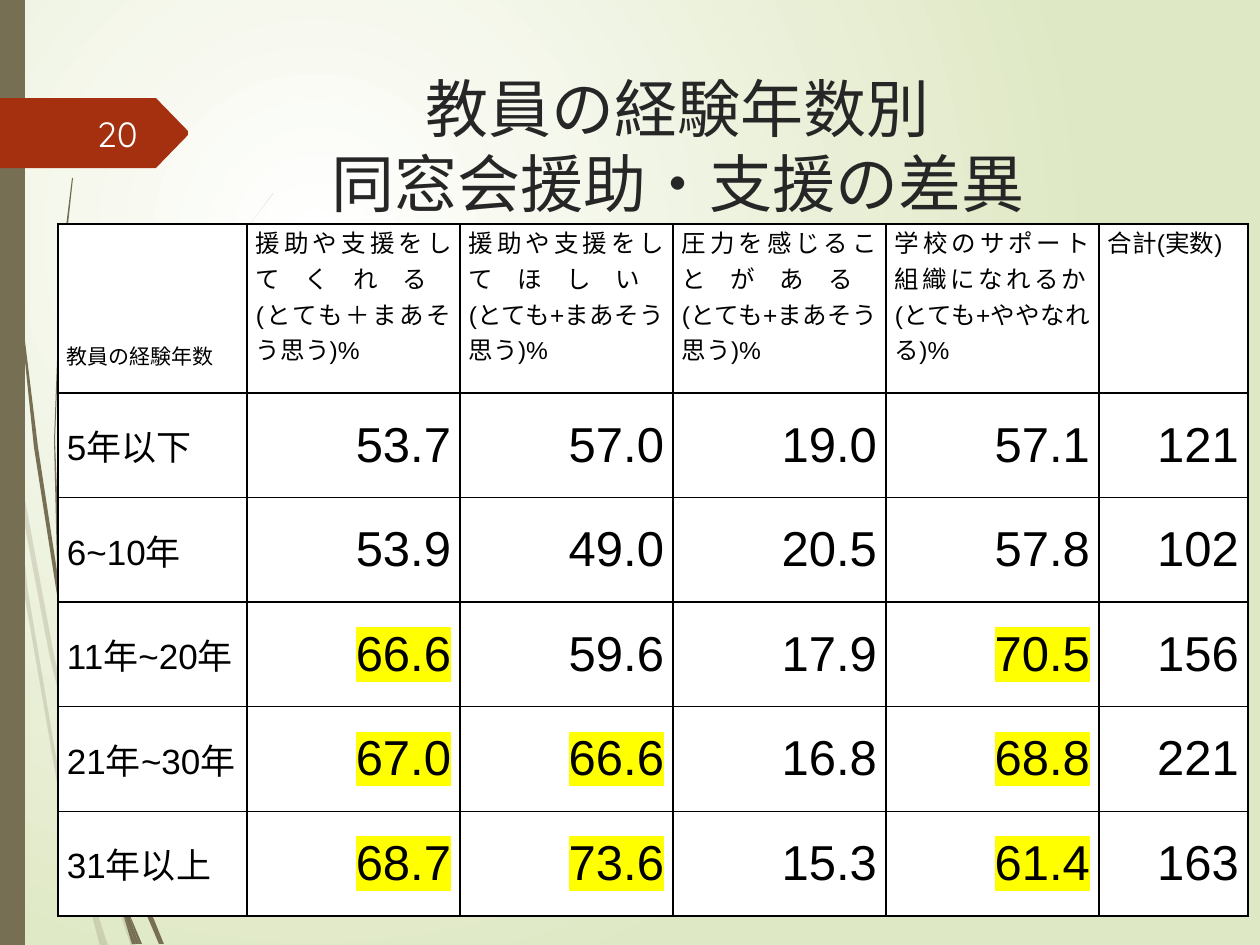
from lxml.etree import SubElement
from pptx import Presentation
from pptx.dml.color import RGBColor
from pptx.enum.shapes import MSO_SHAPE
from pptx.enum.text import MSO_ANCHOR, PP_ALIGN
from pptx.oxml import parse_xml
from pptx.oxml.ns import qn
from pptx.util import Emu, Pt

PX = 914400 / 126
OLIVE = RGBColor(0x76, 0x6F, 0x54)
RUST = RGBColor(0xA5, 0x30, 0x10)
WHITE = RGBColor(0xFF, 0xFF, 0xFF)
PALE = RGBColor(0xFE, 0xFF, 0xFF)
SAGE = RGBColor(0xDF, 0xE8, 0xC4)
CHARCOAL = RGBColor(0x26, 0x26, 0x26)
BLACK = RGBColor(0, 0, 0)
YELLOW = RGBColor(0xFF, 0xFF, 0)

TITLE = ["教員の経験年数別", "同窓会援助・支援の差異"]
PAGE_NUMBER = "20"
CORNER = "教員の経験年数"
HEADERS = [
    ["援助や支援をしてくれる", "(とても＋まあそう思う)%"],
    ["援助や支援をしてほしい", "(とても+まあそう思う)%"],
    ["圧力を感じることがある", "(とても+まあそう思う)%"],
    ["学校のサポート組織になれるか", "(とても+ややなれる)%"],
    ["合計(実数)"],
]
ROWS = [
    ("5年以下", ["53.7", "57.0", "19.0", "57.1", "121"], []),
    ("6~10年", ["53.9", "49.0", "20.5", "57.8", "102"], []),
    ("11年~20年", ["66.6", "59.6", "17.9", "70.5", "156"], [0, 3]),
    ("21年~30年", ["67.0", "66.6", "16.8", "68.8", "221"], [0, 1, 3]),
    ("31年以上", ["68.7", "73.6", "15.3", "61.4", "163"], [0, 1, 3]),
]
COLUMN_WIDTHS = [189, 213, 213, 213, 213, 149]
TABLE_LEFT, TABLE_TOP, TABLE_HEIGHT, HEADER_HEIGHT = 58, 224, 692, 169

FAINT_WISPS = [
    [(10, 441), (8, 406), (0, 355), (0, 377), (9, 433)],
    [(50, 658), (74, 755), (74, 738), (54, 655), (13, 435), (15, 474)],
    [(81, 765), (77, 751), (77, 769), (107, 874), (131, 946), (136, 946), (111, 872)],
    [(105, 946), (108, 946), (92, 896)],
    [(81, 861), (60, 780), (28, 591), (15, 474), (10, 441), (24, 592), (57, 782),
     (81, 873), (88, 900), (87, 891)],
    [(73, 755), (76, 814), (81, 861), (84, 872), (92, 896), (91, 890), (79, 814),
     (77, 769), (77, 766)],
    [(77, 736), (96, 582), (140, 440), (200, 309), (236, 249), (253, 220), (273, 194),
     (273, 193), (253, 220), (234, 248), (199, 307), (139, 438), (94, 581), (74, 736),
     (74, 738), (77, 751)],
    [(88, 900), (100, 946), (103, 946)],
    [(77, 766), (77, 769), (77, 751), (74, 738), (73, 755)],
    [(84, 872), (82, 861), (87, 891), (88, 900), (103, 946), (105, 946), (92, 896)],
]
SOLID_WISPS = [
    [(6, 139), (18, 294), (34, 447), (58, 601), (59, 606), (57, 576), (57, 571),
     (38, 447), (19, 292), (8, 137), (5, 60), (4, 0), (3, 0), (4, 60)],
    [(92, 746), (111, 813), (111, 798), (111, 795), (97, 743), (63, 595), (67, 636)],
    [(118, 818), (115, 808), (115, 827), (137, 892), (159, 944), (164, 944), (142, 890)],
    [(115, 871), (102, 828), (76, 701), (67, 636), (59, 601), (71, 702), (97, 830),
     (116, 892), (122, 910), (121, 903)],
    [(63, 595), (60, 571), (55, 440), (60, 309), (66, 243), (73, 178), (72, 178),
     (64, 243), (59, 309), (54, 440), (57, 566), (62, 595)],
    [(139, 944), (142, 944), (126, 906)],
    [(59, 601), (67, 636), (63, 595), (62, 595), (57, 566), (57, 571)],
    [(115, 798), (130, 696), (165, 600), (213, 512), (241, 471), (256, 452), (272, 433),
     (271, 433), (256, 451), (241, 470), (212, 510), (163, 597), (127, 694), (111, 795),
     (115, 808)],
    [(122, 910), (132, 944), (136, 944)],
    [(111, 813), (115, 871), (121, 890), (126, 906), (126, 902), (115, 827), (113, 820)],
    [(111, 813), (113, 820), (115, 827), (115, 808), (111, 795)],
    [(121, 890), (115, 871), (121, 903), (122, 910), (136, 944), (139, 944), (126, 906)],
]
PAGE_TAG = [(0, 98), (156, 98), (188, 131), (188, 135), (156, 168), (0, 168)]


def px(length):
    return Emu(round(length * PX))


def paint(shape, color, opacity=100):
    shape.shadow.inherit = False
    shape.fill.solid()
    shape.fill.fore_color.rgb = color
    shape.line.fill.background()
    if opacity < 100:
        tint = shape.fill._xPr.find(".//" + qn("a:srgbClr"))
        SubElement(tint, qn("a:alpha"), val=str(opacity * 1000))


def add_outline(page, points, color, opacity=100):
    builder = page.shapes.build_freeform(*points[0], scale=PX)
    builder.add_line_segments(points[1:], close=True)
    paint(builder.convert_to_shape(), color, opacity)


def write(frame, lines, size, color, align, font="Arial", highlight=None):
    frame.word_wrap = True
    para = frame.paragraphs[0]
    para.alignment = align
    for index, line in enumerate(lines):
        if index:
            para.add_line_break()
        span = para.add_run()
        span.text = line
        span.font.size = Pt(size)
        span.font.color.rgb = color
        if highlight:
            marker = SubElement(span.font._element, qn("a:highlight"))
            SubElement(marker, qn("a:srgbClr"), val=str(highlight))
        span.font.name = font


def add_text(page, left, top, width, height, anchor, *text):
    box = page.shapes.add_textbox(px(left), px(top), px(width), px(height))
    box.text_frame.vertical_anchor = anchor
    write(box.text_frame, *text)


def style_cell(cell, anchor, bottom=0):
    cell.margin_left = cell.margin_right = px(9)
    cell.margin_top, cell.margin_bottom = 0, px(bottom)
    cell.vertical_anchor = anchor
    properties = cell._tc.get_or_add_tcPr()
    for side in ("L", "R", "T", "B"):
        border = SubElement(properties, qn("a:ln" + side), w=str(Pt(1)))
        stroke = SubElement(border, qn("a:solidFill"))
        SubElement(stroke, qn("a:srgbClr"), val=str(BLACK))
    cell.fill.solid()
    cell.fill.fore_color.rgb = WHITE


def add_survey_table(page):
    table = page.shapes.add_table(
        len(ROWS) + 1, len(COLUMN_WIDTHS), px(TABLE_LEFT), px(TABLE_TOP),
        px(sum(COLUMN_WIDTHS)), px(TABLE_HEIGHT)).table
    table.first_row = table.horz_banding = False
    for column, width in zip(table.columns, COLUMN_WIDTHS):
        column.width = px(width)
    for row in table.rows:
        row.height = px((TABLE_HEIGHT - HEADER_HEIGHT) / len(ROWS))
    table.rows[0].height = px(HEADER_HEIGHT)

    corner = table.cell(0, 0)
    style_cell(corner, MSO_ANCHOR.BOTTOM, bottom=22)
    write(corner.text_frame, [CORNER], 12, BLACK, PP_ALIGN.JUSTIFY)
    for column, lines in enumerate(HEADERS, 1):
        cell = table.cell(0, column)
        style_cell(cell, MSO_ANCHOR.TOP)
        write(cell.text_frame, lines, 14, BLACK, PP_ALIGN.JUSTIFY)
    for row, (label, values, marked) in enumerate(ROWS, 1):
        cell = table.cell(row, 0)
        style_cell(cell, MSO_ANCHOR.MIDDLE)
        write(cell.text_frame, [label], 20, BLACK, PP_ALIGN.LEFT)
        for index, value in enumerate(values):
            cell = table.cell(row, index + 1)
            style_cell(cell, MSO_ANCHOR.MIDDLE)
            write(cell.text_frame, [value], 28, BLACK, PP_ALIGN.RIGHT,
                  highlight=YELLOW if index in marked else None)


def set_background(page):
    page.background.fill.solid()
    solid = page._element.cSld.find(".//" + qn("a:solidFill"))
    gradient = parse_xml(
        '<a:gradFill xmlns:a="http://schemas.openxmlformats.org/drawingml/2006/main" '
        f'rotWithShape="1"><a:gsLst><a:gs pos="0"><a:srgbClr val="{WHITE}"/></a:gs>'
        f'<a:gs pos="100000"><a:srgbClr val="{SAGE}"/></a:gs></a:gsLst>'
        '<a:path path="circle"><a:fillToRect l="50000" t="50000" r="100000" b="100000"/>'
        '</a:path></a:gradFill>')
    solid.getparent().replace(solid, gradient)


def main():
    deck = Presentation()
    deck.slide_width, deck.slide_height = px(1260), px(945)
    page = deck.slides.add_slide(deck.slide_layouts[6])
    set_background(page)
    for points in FAINT_WISPS:
        add_outline(page, points, OLIVE, opacity=20)
    for points in SOLID_WISPS:
        add_outline(page, points, OLIVE)
    rail = page.shapes.add_shape(MSO_SHAPE.RECTANGLE, 0, 0, px(25), px(945))
    paint(rail, OLIVE)
    add_outline(page, PAGE_TAG, RUST)
    add_text(page, 111, 63, 1134, 158, MSO_ANCHOR.TOP,
             TITLE, 36, CHARCOAL, PP_ALIGN.CENTER)
    add_survey_table(page)
    add_text(page, 70, 108, 80, 51, MSO_ANCHOR.MIDDLE,
             [PAGE_NUMBER], 20, PALE, PP_ALIGN.RIGHT, "Quicksand")
    deck.save("out.pptx")


if __name__ == "__main__":
    main()
